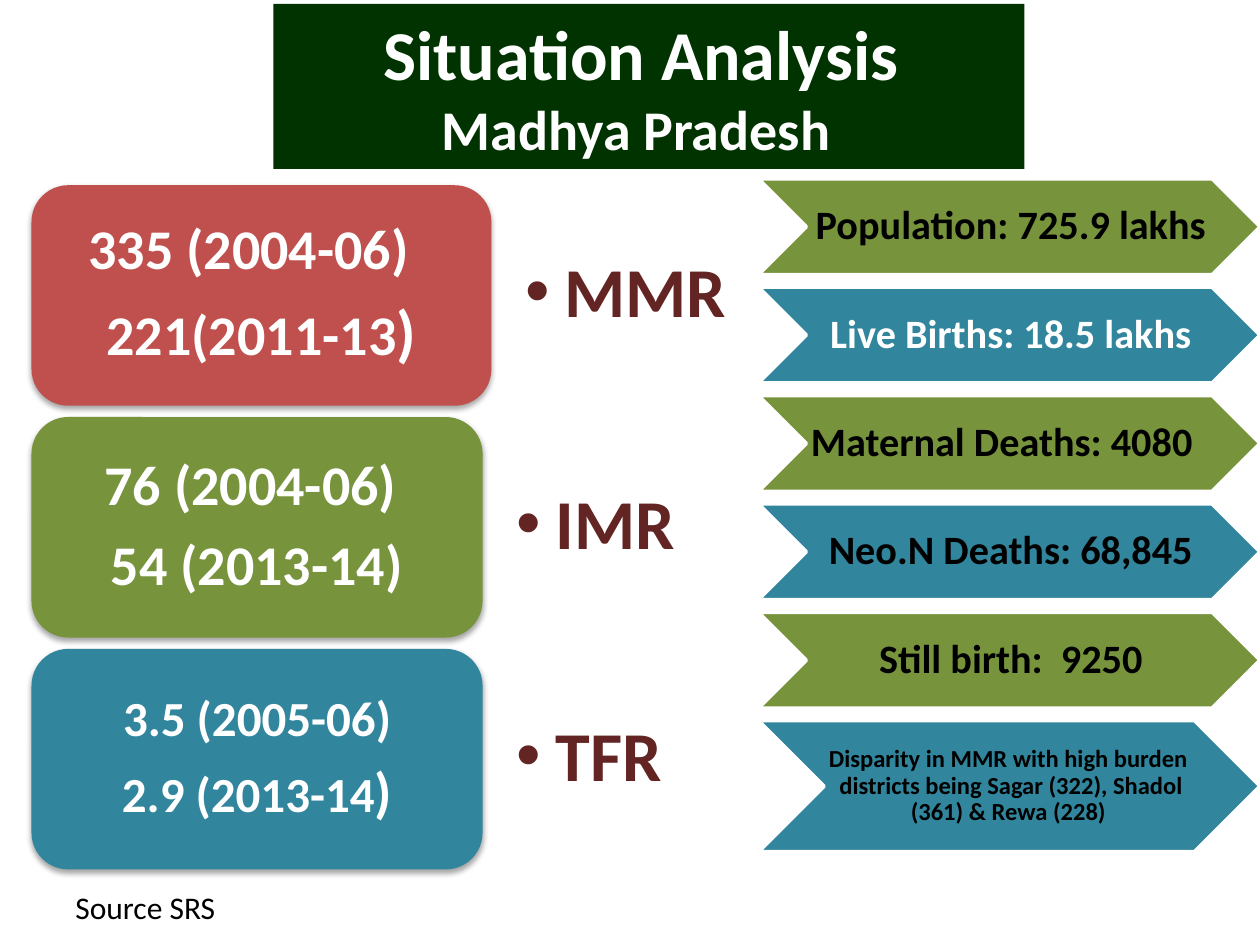
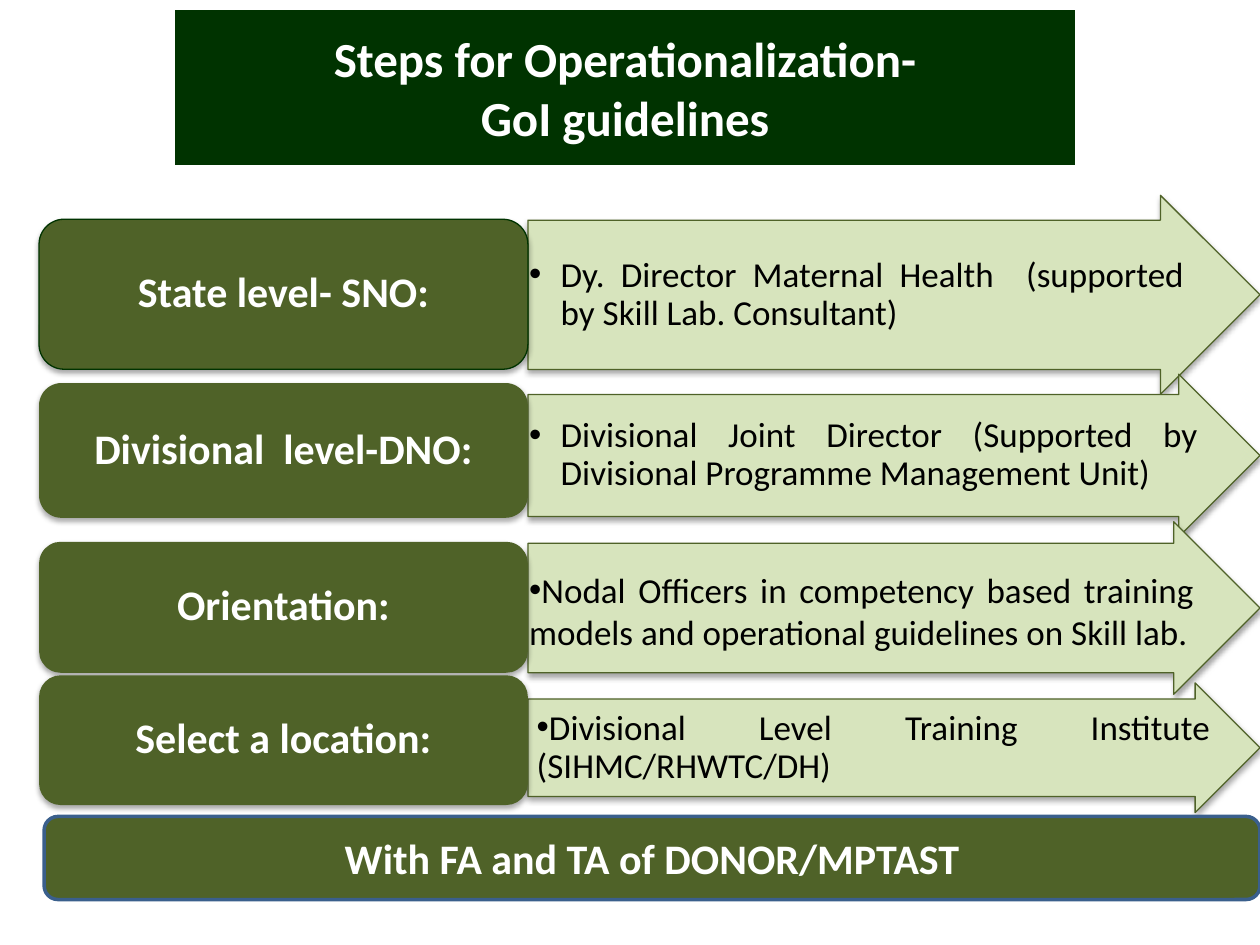
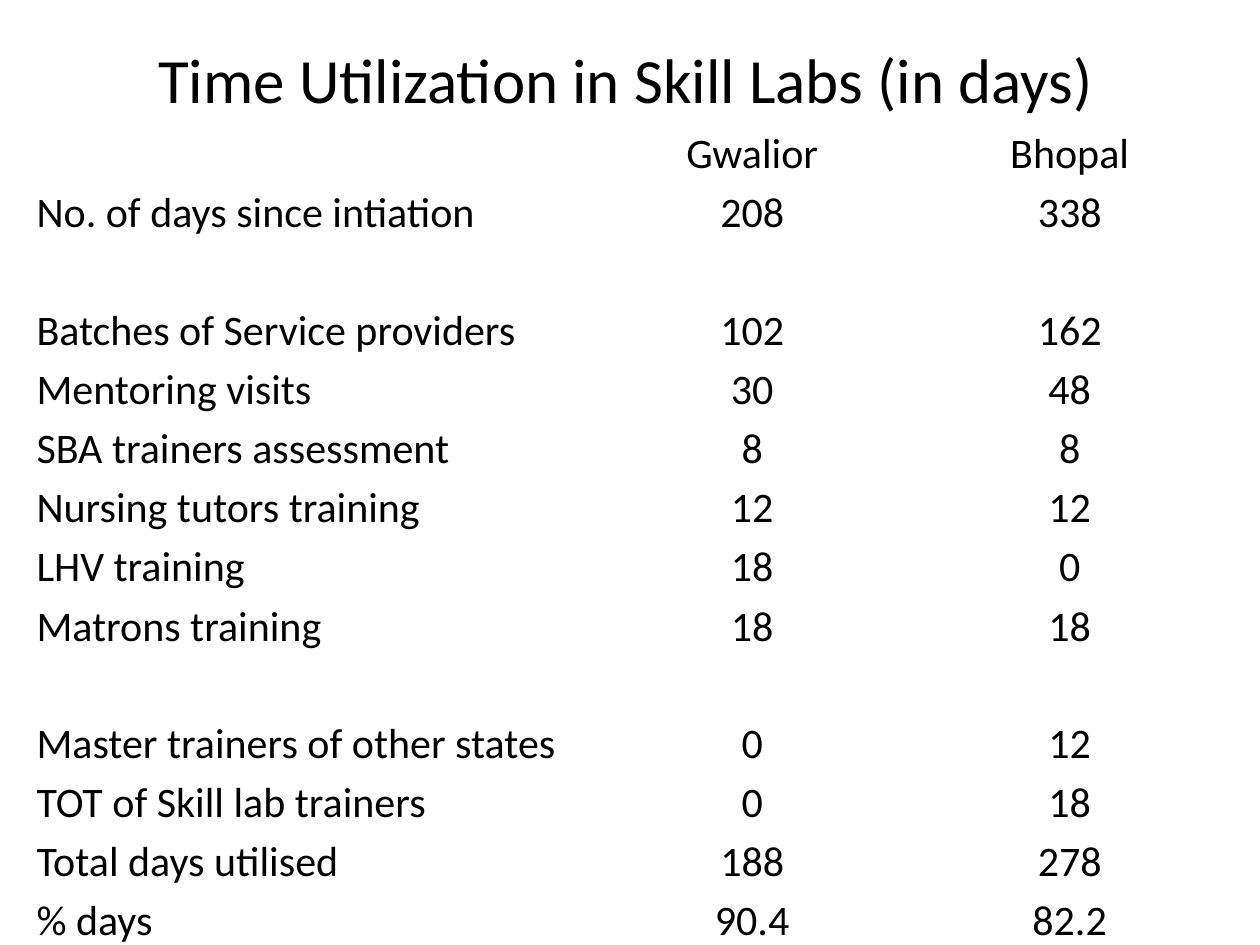
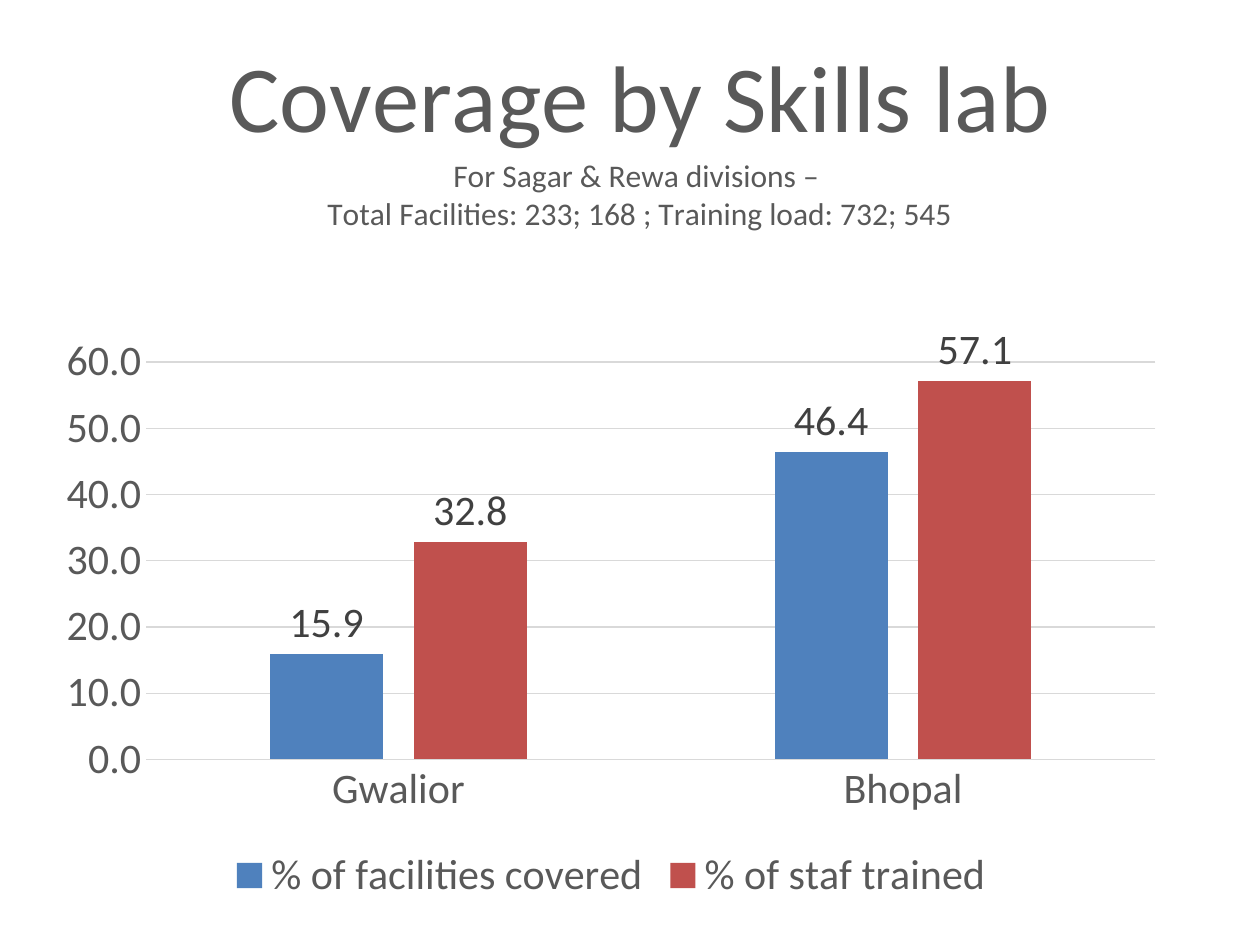
from pptx import Presentation
from pptx.chart.data import CategoryChartData
from pptx.dml.color import RGBColor
from pptx.enum.chart import XL_CHART_TYPE as ChartType, XL_LABEL_POSITION as LabelPosition
from pptx.enum.chart import XL_LEGEND_POSITION as LegendPosition, XL_TICK_MARK as TickMark
from pptx.enum.shapes import MSO_SHAPE as Preset
from pptx.enum.text import MSO_ANCHOR as Anchor, MSO_AUTO_SIZE as AutoSize, PP_ALIGN as Align
from pptx.oxml import parse_xml
from pptx.oxml.ns import nsdecls
from pptx.util import Inches, Pt

# Shared look
FONT = "Calibri"
WHITE, BLACK, BAND = "FFFFFF", "000000", "003300"
RED, GREEN, TEAL, BLUE = "C0504D", "77933C", "31859C", "4F81BD"
OLIVE, PALE, MAROON = "4F6228", "D7E4BD", "632523"
GREY, LABEL_GREY, GRID = "595959", "404040", "D9D9D9"
TITLE_ONLY, BLANK = 5, 6
BOX_INSETS = (0.1, 0.05, 0.1, 0.05)

# Slide 1: a line is a list of (text, size) spans
SITUATION_TITLE = [[("Situation Analysis ", 40)], [("Madhya Pradesh  ", 32)]]
INDICATORS = [
    ("MMR", RED, 3.65, [[("335 (2004-06)  ", 32)], [("221(2011-13", 32), (")", 36)]]),
    ("IMR", GREEN, 3.58, [[("76 (2004-06) ", 32)], [("54 (2013-14)", 32)]]),
    ("TFR", TEAL, 3.58, [[("3.5 (2005-06)", 28)], [("2.9 (2013-14", 28), (")", 32)]]),
]
FACTS = [
    ("Population: 725.9 lakhs", BLACK, 23, 0.76),
    ("Live Births: 18.5 lakhs", WHITE, 23, 0.76),
    ("Maternal Deaths: 4080  ", BLACK, 23, 0.76),
    ("Neo.N Deaths: 68,845", BLACK, 23, 0.76),
    ("Still birth:  9250", BLACK, 23, 0.76),
    ("Disparity in MMR with high burden  districts being Sagar (322), "
     "Shadol (361) & Rewa (228) ", BLACK, 14, 1.04),
]
SOURCE = "Source SRS"

# Slide 2: level, (top, height) of its card and arrow, detail, its paragraph format
STEPS_TITLE = [[("Steps for Operationalization-\nGoI guidelines", 28)]]
HANGING = {"margin": 0.25, "indent": -0.25, "spacing": 0.9, "after": 0.15}
STEPS = [
    ("State level- SNO:", (1.74, 1.19), (1.55, 1.58),
     "Dy. Director Maternal Health  (supported by Skill Lab. Consultant)", HANGING),
    ("Divisional  level-DNO:", (3.04, 1.07), (2.97, 1.29),
     "Divisional Joint Director (Supported by Divisional Programme Management Unit)  ",
     HANGING),
    ("Orientation:", (4.3, 1.04), (4.14, 1.37),
     "Nodal Officers in competency based training models and operational guidelines "
     "on Skill lab.", {"insets": (0.01, 0.05, 0.01, 0.01)}),
    ("Select a location:", (5.36, 1.03), (5.42, 1.03),
     "Divisional Level Training Institute (SIHMC/RHWTC/DH) ",
     {"margin": 0.06, "spacing": 0.9, "after": 0.15}),
]
SUPPORT = "With FA and TA of DONOR/MPTAST"

# Slide 3
TIME_TITLE = "Time Utilization in Skill Labs (in days)"
TIME_ROWS = [
    ("", "Gwalior", "Bhopal"),
    ("No. of days since intiation", "208", "338"),
    ("Batches of Service providers", "102", "162"),
    ("Mentoring visits", "30", "48"),
    ("SBA trainers assessment", "8", "8"),
    ("Nursing tutors training", "12", "12"),
    ("LHV training", "18", "0"),
    ("Matrons training", "18", "18"),
    ("Master trainers of other states", "0", "12"),
    ("TOT of Skill lab trainers", "0", "18"),
    ("Total days utilised", "188", "278"),
    ("% days", "90.4", "82.2"),
]
TIME_COLUMNS = (4.33, 2.72, 2.32)
TITLE_ROW, PLAIN_ROW, TALL_ROW = 0.67, 0.47, 0.93
GROUP_STARTS = ("Batches of Service providers", "Master trainers of other states")

# Slide 4
COVERAGE_TITLE = [
    ("Coverage by Skills lab", 54),
    ("For Sagar & Rewa divisions – ", 18),
    ("Total Facilities: 233; 168 ; Training load: 732; 545", 18),
]
LABS = ("Gwalior", "Bhopal")
COVERAGE = [
    ("% of facilities covered", (15.9, 46.4), BLUE),
    ("% of staf trained", (32.8, 57.1), RED),
]


def color(value):
    return RGBColor.from_string(value)


def style_font(font, size, ink, bold=False):
    for name, value in {"name": FONT, "size": Pt(size), "bold": bold}.items():
        setattr(font, name, value)
    font.color.rgb = color(ink)


def add_bullet(para, margin, indent):
    props = para._p.get_or_add_pPr()
    props.set("marL", str(Inches(margin)))
    props.set("indent", str(Inches(indent)))
    props.append(parse_xml(f'<a:buFont {nsdecls("a")} typeface="Arial"/>'))
    props.append(parse_xml(f'<a:buChar {nsdecls("a")} char="•"/>'))


def write(holder, lines, ink, bold=False, align=Align.CENTER, anchor=Anchor.MIDDLE,
          insets=BOX_INSETS, spacing=None, after=0, bullet=False, margin=0, indent=0):
    """Fill a shape with lines of spans; after is a share of the text size."""
    frame = holder.text_frame
    left, top, right, bottom = map(Inches, insets)
    settings = {"word_wrap": True, "auto_size": AutoSize.NONE, "vertical_anchor": anchor,
                "margin_left": left, "margin_top": top,
                "margin_right": right, "margin_bottom": bottom}
    for name, value in settings.items():
        setattr(frame, name, value)
    for number, spans in enumerate(lines):
        para = frame.add_paragraph() if number else frame.paragraphs[0]
        para.alignment = align
        para.space_before = Pt(0)
        para.space_after = Pt(round(after * spans[0][1], 1))
        if spacing:
            para.line_spacing = spacing
        if bullet:
            add_bullet(para, margin, indent)
        for text, size in spans:
            for part_number, part in enumerate(text.split("\n")):
                if part_number:
                    para.add_line_break()
                span = para.add_run()
                span.text = part
                style_font(span.font, size, ink, bold)


def add_box(page, preset, place, fill, line=None, shadow=False):
    box = page.shapes.add_shape(preset, *map(Inches, place))
    box.shadow.inherit = False
    box.fill.solid()
    box.fill.fore_color.rgb = color(fill)
    if line:
        box.line.color.rgb = color(line[0])
        box.line.width = Pt(line[1])
    else:
        box.line.fill.background()
    if shadow:
        effects = box._element.spPr.find("{*}effectLst")
        effects.append(parse_xml(
            f'<a:outerShdw {nsdecls("a")} blurRad="40000" dist="23000" dir="5400000" '
            'rotWithShape="0"><a:srgbClr val="000000"><a:alpha val="35000"/>'
            '</a:srgbClr></a:outerShdw>'))
    return box


def add_text(page, place, lines, ink, **formats):
    write(page.shapes.add_textbox(*map(Inches, place)), lines, ink, **formats)


def add_band_title(page, place, lines):
    title = page.shapes.title
    title.left, title.top, title.width, title.height = map(Inches, place)
    title.fill.solid()
    title.fill.fore_color.rgb = color(BAND)
    write(title, lines, WHITE, bold=True)


def add_page(deck, layout):
    return deck.slides.add_slide(deck.slide_layouts[layout])


def build_situation(deck):
    page = add_page(deck, TITLE_ONLY)
    add_band_title(page, (2.17, 0.03, 5.96, 1.31), SITUATION_TITLE)

    # Indicator cards and their names
    left, first_top, height, pitch = 0.25, 1.47, 1.75, 1.84
    for number, (name, fill, width, lines) in enumerate(INDICATORS):
        top = first_top + number * pitch
        add_text(page, (left + width, top + 0.24, 2.3, 1.26), [[(name, 40)]], MAROON,
                 bold=True, align=Align.LEFT, insets=(0.27, 0.14, 0.2, 0.14),
                 spacing=0.9, after=0.15, bullet=True, margin=0.31, indent=-0.31)
        card = add_box(page, Preset.ROUNDED_RECTANGLE, (left, top, width, height), fill,
                       shadow=True)
        write(card, lines, WHITE, bold=True, insets=(0.13, 0.07, 0.13, 0.07),
              spacing=0.9, after=0.35)

    # Chevrons in alternating colours
    top, gap = 1.42, 0.1
    for number, (text, ink, size, height) in enumerate(FACTS):
        chevron = add_box(page, Preset.CHEVRON, (6.02, top, 3.98, height),
                          (GREEN, TEAL)[number % 2], (WHITE, 2))
        write(chevron, [[(text, size)]], ink, bold=True, insets=(0.03, 0.02, 0, 0.02),
              spacing=0.9, after=0.35)
        top += height + gap

    add_text(page, (0.5, 7, 2.42, 0.4), [[(SOURCE, 18)]], BLACK, align=Align.LEFT,
             anchor=Anchor.TOP)


def build_steps(deck):
    page = add_page(deck, TITLE_ONLY)
    add_band_title(page, (1.39, 0.08, 7.14, 1.23), STEPS_TITLE)

    # One arrow and one card for each step
    left, middle, right = 0.31, 4.19, 10
    for number, (level, card_span, arrow_span, detail, formats) in enumerate(STEPS):
        top, height = arrow_span
        arrow = add_box(page, Preset.RIGHT_ARROW, (middle, top, right - middle, height),
                        PALE, (OLIVE, 0.75), shadow=True)
        arrow.adjustments[0], arrow.adjustments[1] = 0.75, 0.5
        write(arrow, [[(detail, 20)]], BLACK, align=Align.JUSTIFY, bullet=True,
              **{"insets": (0.01,) * 4, **formats})
        top, height = card_span
        card = add_box(page, Preset.ROUNDED_RECTANGLE, (left, top, middle - left, height),
                       OLIVE, None if number else (BAND, 0.75), shadow=True)
        write(card, [[(level, 24)]], WHITE, bold=True, spacing=0.9, after=0.35)

    support = add_box(page, Preset.ROUNDED_RECTANGLE, (0.35, 6.48, 9.65, 0.66), OLIVE,
                      ("3A5F8C", 2))
    write(support, [[(SUPPORT, 24)]], WHITE, bold=True)


def build_time(deck):
    page = add_page(deck, BLANK)
    rows = [(TIME_TITLE, "", "")] + TIME_ROWS
    heights = [TITLE_ROW] + [TALL_ROW if row[0] in GROUP_STARTS else PLAIN_ROW
                             for row in TIME_ROWS]
    place = (0.28, 0.29, sum(TIME_COLUMNS), sum(heights))
    table = page.shapes.add_table(len(rows), len(TIME_COLUMNS), *map(Inches, place)).table
    table.first_row = table.horz_banding = False
    for column, width in zip(table.columns, TIME_COLUMNS):
        column.width = Inches(width)
    for row, height in zip(table.rows, heights):
        row.height = Inches(height)
    table.cell(0, 0).merge(table.cell(0, len(TIME_COLUMNS) - 1))

    for row_number, row in enumerate(rows):
        for column_number, text in enumerate(row):
            cell = table.cell(row_number, column_number)
            cell.fill.background()
            cell.vertical_anchor = Anchor.BOTTOM
            cell.margin_left = cell.margin_top = cell.margin_right = Inches(0.01)
            cell.margin_bottom = 0
            if text:
                para = cell.text_frame.paragraphs[0]
                centred = column_number or not row_number
                para.alignment = Align.CENTER if centred else Align.LEFT
                span = para.add_run()
                span.text = text
                style_font(span.font, 24 if row_number else 36, BLACK)


def set_layout(parent, modes, **shares):
    """Place a chart part by shares of the chart's size."""
    for old in parent.findall("{*}layout"):
        parent.remove(old)
    entries = "".join(f'<c:{tag} val="{value}"/>' for tag, value in {**modes, **shares}.items())
    layout = parse_xml(f'<c:layout {nsdecls("c")}><c:manualLayout>{entries}'
                       '</c:manualLayout></c:layout>')
    text = parent.find("{*}tx")
    parent.insert(0 if text is None else 1, layout)


def build_coverage(deck):
    page = add_page(deck, BLANK)
    data = CategoryChartData(number_format="0.0")
    data.categories = LABS
    for name, values, _ in COVERAGE:
        data.add_series(name, values)
    chart = page.shapes.add_chart(ChartType.COLUMN_CLUSTERED,
                                  *map(Inches, (0.35, 0.21, 9, 7.01)), data).chart
    style_font(chart.font, 24, BLACK)

    # Title and plot area
    frame = chart.chart_title.text_frame
    for number, (text, size) in enumerate(COVERAGE_TITLE):
        para = frame.add_paragraph() if number else frame.paragraphs[0]
        para.alignment = Align.CENTER
        span = para.add_run()
        span.text = text
        style_font(span.font, size, GREY)
    edges = {"xMode": "edge", "yMode": "edge"}
    set_layout(chart.chart_title._element, edges, x=0.16, y=0.01)
    set_layout(chart._chartSpace.chart.plotArea, {"layoutTarget": "inner", **edges},
               x=0.09, y=0.38, w=0.89, h=0.45)

    # Columns and their labels
    plot = chart.plots[0]
    plot.vary_by_categories = False
    plot.gap_width, plot.overlap = 219, -27
    for series, (_, _, fill) in zip(plot.series, COVERAGE):
        series.format.fill.solid()
        series.format.fill.fore_color.rgb = color(fill)
        labels = series.data_labels
        formats = {"show_value": True, "number_format": "0.0",
                   "number_format_is_linked": False, "position": LabelPosition.OUTSIDE_END}
        for name, value in formats.items():
            setattr(labels, name, value)
        style_font(labels.font, 24, LABEL_GREY)

    # Axes and legend
    values, categories = chart.value_axis, chart.category_axis
    for axis in (values, categories):
        axis.major_tick_mark = axis.minor_tick_mark = TickMark.NONE
        style_font(axis.tick_labels.font, 24, GREY)
    values.minimum_scale, values.maximum_scale, values.major_unit = 0, 60, 10
    values.tick_labels.number_format = "0.0"
    values.tick_labels.number_format_is_linked = False
    values.format.line.fill.background()
    for line in (values.major_gridlines.format.line, categories.format.line):
        line.color.rgb = color(GRID)
        line.width = Pt(0.75)
    chart.has_legend = True
    chart.legend.position = LegendPosition.BOTTOM
    chart.legend.include_in_layout = False
    style_font(chart.legend.font, 24, GREY)


def main():
    deck = Presentation()
    deck.slide_width, deck.slide_height = Inches(10), Inches(7.5)
    for build in (build_situation, build_steps, build_time, build_coverage):
        build(deck)
    deck.save("out.pptx")


if __name__ == "__main__":
    main()
